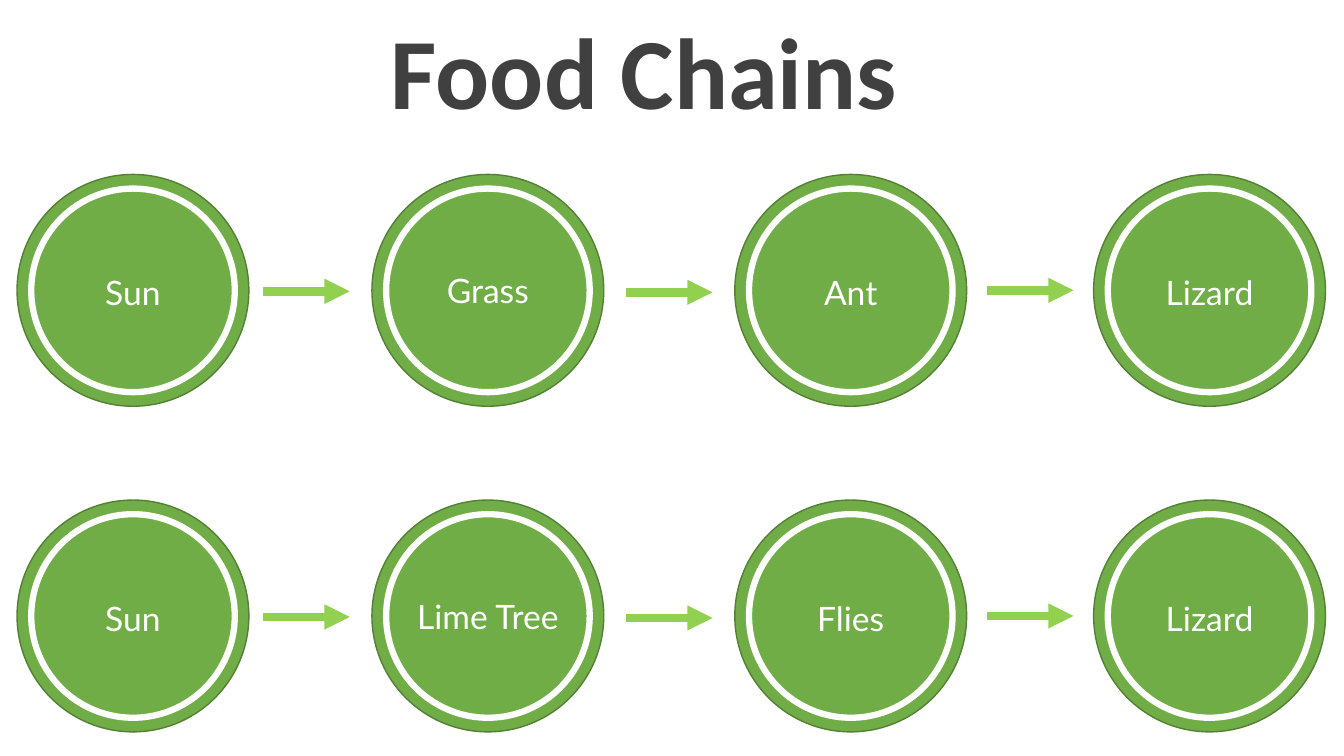
from lxml.etree import SubElement
from pptx import Presentation
from pptx.dml.color import RGBColor
from pptx.enum.shapes import MSO_CONNECTOR, MSO_SHAPE
from pptx.enum.text import MSO_AUTO_SIZE, PP_ALIGN
from pptx.oxml.ns import qn
from pptx.util import Pt

COLORS = {
    "disc": "70AD47",
    "rim": "538035",
    "ring": "FFFFFF",
    "label": "FFFFFF",
    "arrow": "92D050",
    "title": "404040",
}

# Layout in points
DISC_SIZE = 165.6
RING_INSET = 10.1
FIRST_ROW_TOP, ROW_PITCH = 124.6, 232.6
COLUMN_LEFTS = [12.2, 265.7, 524.9, 781.2]
LABEL_DROPS = [66.2, 64.8, 66.2, 66.2]
LABEL_INSET, LABEL_WIDTH, LABEL_HEIGHT = 11.1, 143.3, 36.4
ARROW_STARTS = [(187.9, 83.5), (447.1, 84.2), (704.9, 82.8)]
ARROW_LENGTH = 61.9

FOOD_CHAINS = [
    ["Sun", "Grass", "Ant", "Lizard"],
    ["Sun", "Lime Tree", "Flies", "Lizard"],
]


def write_text(frame, text, font="Lato", size=24, color="label", bold=False):
    paragraph = frame.paragraphs[0]
    paragraph.alignment = PP_ALIGN.CENTER
    run = paragraph.add_run()
    run.text = text
    run.font.name = font
    run.font.size = Pt(size)
    run.font.bold = bold
    run.font.color.rgb = RGBColor.from_string(COLORS[color])


class DiagramSlide:
    def __init__(self, slide, colors):
        self.slide = slide
        self.colors = colors

    def color(self, name):
        return RGBColor.from_string(self.colors[name])

    def circle(self, group, left, top, size, line, weight, fill=None):
        circle = group.shapes.add_shape(
            MSO_SHAPE.OVAL, Pt(left), Pt(top), Pt(size), Pt(size))
        circle.shadow.inherit = False
        if fill:
            circle.fill.solid()
            circle.fill.fore_color.rgb = self.color(fill)
        else:
            circle.fill.background()
        circle.line.color.rgb = self.color(line)
        circle.line.width = Pt(weight)

    def organism(self, left, top):
        group = self.slide.shapes.add_group_shape()
        self.circle(group, left, top, DISC_SIZE, "rim", 1, fill="disc")
        self.circle(group, left + RING_INSET, top + RING_INSET,
                    DISC_SIZE - 2 * RING_INSET, "ring", 4.5)

    def arrow(self, left, top, length):
        arrow = self.slide.shapes.add_connector(
            MSO_CONNECTOR.STRAIGHT, Pt(left), Pt(top), Pt(left + length), Pt(top))
        arrow.line.color.rgb = self.color("arrow")
        arrow.line.width = Pt(6)
        properties = arrow.line._get_or_add_ln()
        SubElement(properties, qn("a:tailEnd"), type="triangle")
        SubElement(properties.getparent(), qn("a:effectLst"))

    def text(self, text, left, top, width, height, wrap=True, **style):
        box = self.slide.shapes.add_textbox(
            Pt(left), Pt(top), Pt(width), Pt(height))
        box.text_frame.word_wrap = wrap
        box.text_frame.auto_size = MSO_AUTO_SIZE.SHAPE_TO_FIT_TEXT
        write_text(box.text_frame, text, **style)


def main():
    presentation = Presentation()
    presentation.slide_width = Pt(960)
    presentation.slide_height = Pt(540)
    blank = presentation.slide_layouts[6]
    diagram = DiagramSlide(presentation.slides.add_slide(blank), COLORS)

    # One row per food chain
    for row, chain in enumerate(FOOD_CHAINS):
        top = FIRST_ROW_TOP + row * ROW_PITCH
        for organism, left, drop in zip(chain, COLUMN_LEFTS, LABEL_DROPS):
            diagram.organism(left, top)
            diagram.text(organism, left + LABEL_INSET, top + drop,
                         LABEL_WIDTH, LABEL_HEIGHT)
        for left, drop in ARROW_STARTS:
            diagram.arrow(left, top + drop, ARROW_LENGTH)

    # Title
    diagram.text("Food Chains", 270, 2.9, 380.2, 94.3, wrap=False,
                 font="Calibri", size=72, color="title", bold=True)

    presentation.save("out.pptx")


if __name__ == "__main__":
    main()
